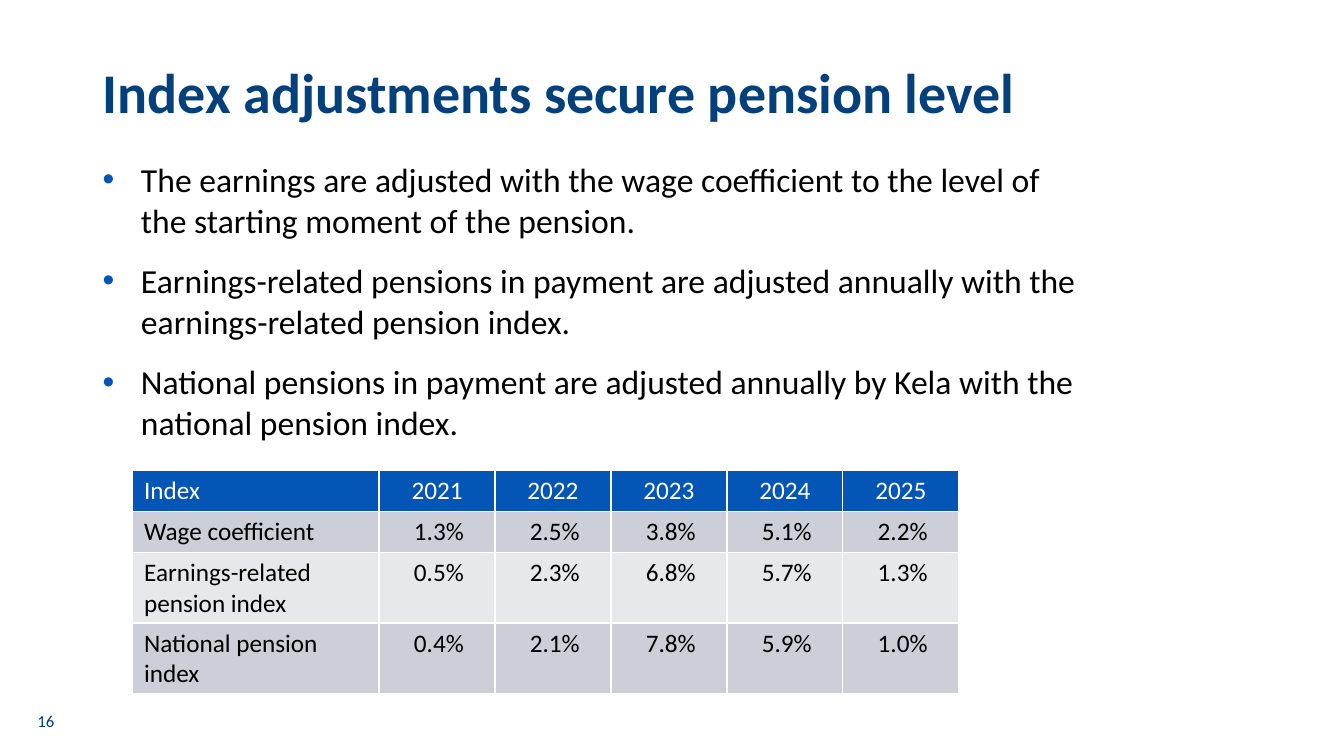
from dataclasses import dataclass

from lxml.etree import SubElement
from pptx import Presentation
from pptx.dml.color import RGBColor as RGB
from pptx.enum.text import MSO_ANCHOR as Anchor, PP_ALIGN as Align
from pptx.oxml import parse_xml
from pptx.oxml.ns import nsdecls, qn
from pptx.util import Inches, Pt


@dataclass(frozen=True)
class Theme:
    face: str = "Calibri"
    navy: str = "03407C"
    blue: str = "0356B5"
    black: str = "000000"
    white: str = "FFFFFF"
    dark: str = "CCCFD7"
    light: str = "E7E8EC"
    title: int = 40
    body: int = 24
    cell: int = 18
    small: int = 12


T = Theme()


def style(para, size, color, bold=False):
    looks = {"name": T.face, "size": Pt(size), "bold": bold}
    for key, value in looks.items():
        setattr(para.font, key, value)
    para.font.color.rgb = RGB.from_string(color)


def edge(cell):
    """Draw thin white borders on all four sides of a cell."""
    props = cell._tc.get_or_add_tcPr()
    for pos, side in enumerate(("lnL", "lnR", "lnT", "lnB")):
        props.insert(pos, parse_xml(
            f'<a:{side} {nsdecls("a")} w="{Pt(1)}"><a:solidFill>'
            f'<a:srgbClr val="{T.white}"/></a:solidFill></a:{side}>'))


deck = Presentation()
deck.slide_width, deck.slide_height = Inches(13.33), Inches(7.5)
slide = deck.slides.add_slide(deck.slide_layouts[5])

# Title
title = slide.shapes.title
place = {"left": 0.92, "top": 0.6, "width": 9.66, "height": 0.94}
for key, value in place.items():
    setattr(title, key, Inches(value))
title.text_frame.text = "Index adjustments secure pension level"
title.text_frame.vertical_anchor = Anchor.TOP
head = title.text_frame.paragraphs[0]
head.alignment = Align.LEFT
head.line_spacing = 0.9
style(head, T.title, T.navy, bold=True)

# Bullet points
points = [
    "The earnings are adjusted with the wage coefficient to the level of "
    "the starting moment of the pension.",
    "Earnings-related pensions in payment are adjusted annually with the "
    "earnings-related pension index.",
    "National pensions in payment are adjusted annually by Kela with the "
    "national pension index.",
]
body = slide.shapes.add_textbox(
    Inches(0.92), Inches(1.53), Inches(9.92), Inches(2.93)).text_frame
body.word_wrap = True
for i, point in enumerate(points):
    para = body.add_paragraph() if i else body.paragraphs[0]
    para.text = point
    if i:
        para.space_before = Pt(14.6)
    props = para._p.get_or_add_pPr()
    props.set("marL", str(Inches(0.38)))
    props.set("indent", str(-Inches(0.38)))
    tint = SubElement(props, qn("a:buClr"))
    SubElement(tint, qn("a:srgbClr"), val=T.blue)
    SubElement(props, qn("a:buFont"), typeface="Arial")
    SubElement(props, qn("a:buChar"), char="•")
    style(para, T.body, T.black)

# Index table
rows = [
    ("Index", "2021", "2022", "2023", "2024", "2025"),
    ("Wage coefficient", "1.3%", "2.5%", "3.8%", "5.1%", "2.2%"),
    ("Earnings-related pension index", "0.5%", "2.3%", "6.8%", "5.7%", "1.3%"),
    ("National pension index", "0.4%", "2.1%", "7.8%", "5.9%", "1.0%"),
]
wide = [2.45] + [1.15] * 5
tall = [0.4, 0.41, 0.7, 0.7]
table = slide.shapes.add_table(
    len(rows), len(wide), Inches(1.31), Inches(4.67),
    Inches(sum(wide)), Inches(sum(tall))).table
for col, width in zip(table.columns, wide):
    col.width = Inches(width)
for row, height in zip(table.rows, tall):
    row.height = Inches(height)

for r, row in enumerate(rows):
    fill = T.blue if r == 0 else T.dark if r % 2 else T.light
    for c, text in enumerate(row):
        cell = table.cell(r, c)
        cell.text = text
        cell.fill.solid()
        cell.fill.fore_color.rgb = RGB.from_string(fill)
        edge(cell)
        if c == 0:
            left, right, align = 0.12, 0.1, Align.LEFT
        elif r == 0:
            left, right, align = 0.08, 0.08, Align.CENTER
        else:
            left, right, align = 0.08, 0.31, Align.RIGHT
        form = {
            "margin_left": Inches(left),
            "margin_right": Inches(right),
            "vertical_anchor": Anchor.MIDDLE if r and c == 0 else Anchor.TOP,
        }
        for key, value in form.items():
            setattr(cell, key, value)
        para = cell.text_frame.paragraphs[0]
        para.alignment = align
        style(para, T.cell, T.black if r else T.white)

# Page number
page = slide.shapes.add_textbox(
    Inches(0.2), Inches(6.95), Inches(0.51), Inches(0.4)).text_frame
page.word_wrap = True
page.vertical_anchor = Anchor.MIDDLE
page.text = "16"
page.paragraphs[0].alignment = Align.CENTER
style(page.paragraphs[0], T.small, T.navy)

deck.save("out.pptx")
